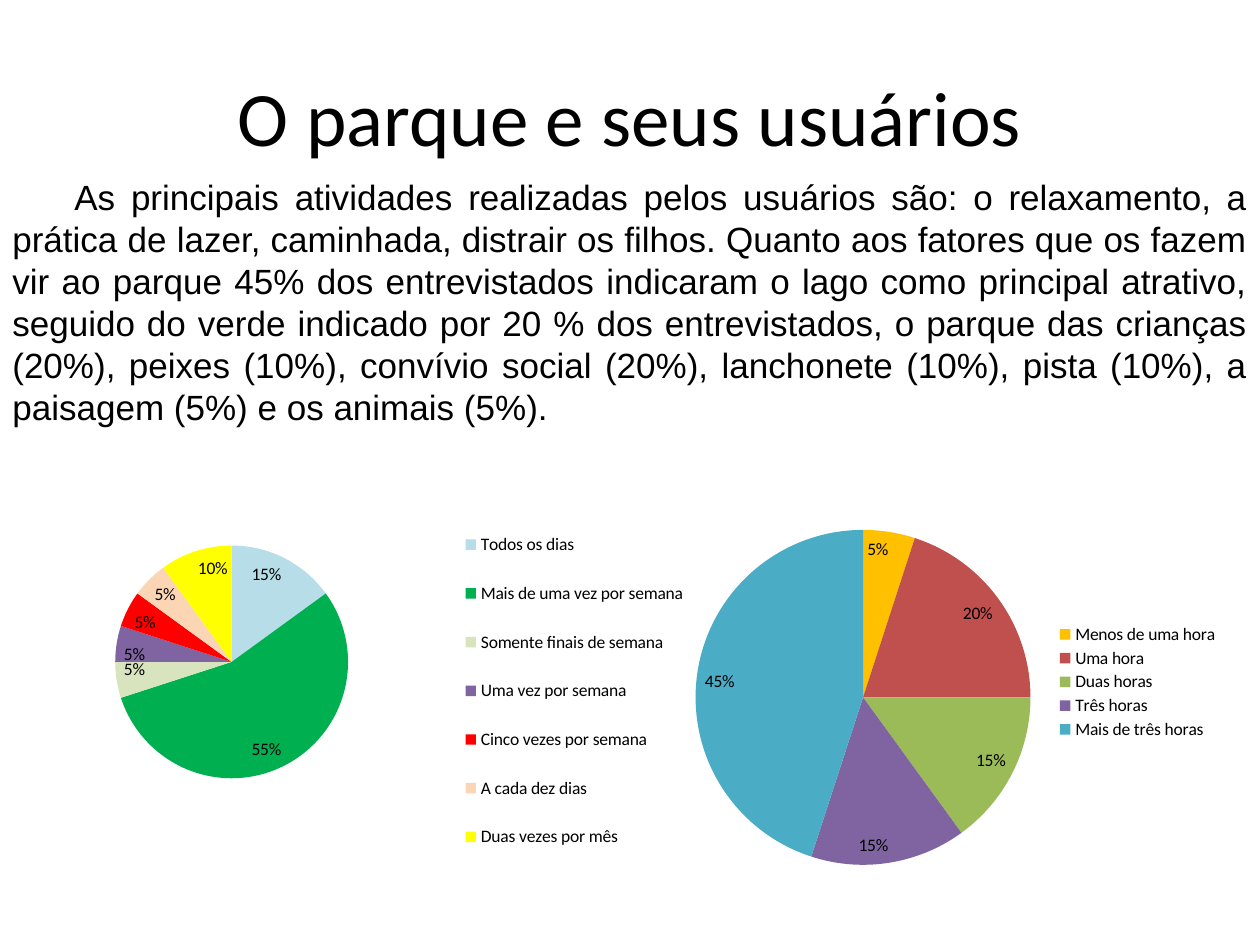
from pptx import Presentation
from pptx.chart.data import CategoryChartData
from pptx.dml.color import RGBColor
from pptx.enum.chart import XL_CHART_TYPE as ChartType, XL_LABEL_POSITION as LabelPos
from pptx.enum.chart import XL_LEGEND_POSITION as LegendPos
from pptx.enum.text import MSO_ANCHOR as Anchor, MSO_AUTO_SIZE as AutoSize, PP_ALIGN as Align
from pptx.oxml import parse_xml
from pptx.oxml.ns import nsdecls, qn
from pptx.util import Cm, Pt

TITLE = "O parque e seus usuários"
BODY = (
    "As principais atividades realizadas pelos usuários são: o relaxamento, a prática de "
    "lazer, caminhada, distrair os filhos. Quanto aos fatores que os fazem vir ao parque 45% "
    "dos entrevistados indicaram o lago como principal atrativo, seguido do verde indicado "
    "por 20 % dos entrevistados, o parque das crianças (20%), peixes (10%), convívio social "
    "(20%), lanchonete (10%), pista (10%), a paisagem (5%) e os animais (5%)."
)
# Category, percentage, slice colour
FREQUENCY = [
    ("Todos os dias", 15, "B7DEE8"),
    ("Mais de uma vez por semana", 55, "00B050"),
    ("Somente finais de semana", 5, "D7E4BD"),
    ("Uma vez por semana", 5, "8064A2"),
    ("Cinco vezes por semana", 5, "FF0000"),
    ("A cada dez dias", 5, "FCD5B5"),
    ("Duas vezes por mês", 10, "FFFF00"),
]
DURATION = [
    ("Menos de uma hora", 5, "FFC000"),
    ("Uma hora", 20, "C0504D"),
    ("Duas horas", 15, "9BBB59"),
    ("Três horas", 15, "8064A2"),
    ("Mais de três horas", 45, "4BACC6"),
]


def rgb(value):
    return RGBColor.from_string(value)


def set_font(font, name, size):
    font.name, font.size = name, Pt(size)
    font.color.rgb = rgb("000000")


def add_text(slide, box, text, name, size, align):
    """One paragraph, vertically centred in its box."""
    sp = slide.shapes.add_textbox(*map(Cm, box))
    tf = sp.text_frame
    tf.word_wrap = True
    tf.vertical_anchor = Anchor.MIDDLE
    p = tf.paragraphs[0]
    p.text = text
    p.alignment = align
    set_font(p.font, name, size)
    return sp


def add_body(slide, box):
    """Justified text with an indented first line."""
    sp = add_text(slide, box, BODY, "Arial", 20, Align.JUSTIFY)
    sp.text_frame.auto_size = AutoSize.SHAPE_TO_FIT_TEXT
    pPr = sp.text_frame.paragraphs[0]._p.get_or_add_pPr()
    pPr.set("marL", "0")
    pPr.set("indent", str(Cm(1.25)))


def set_layout(element, index, fractions, target=""):
    """Fix a chart part at x, y, w, h given as fractions of the chart."""
    for old in element.findall(qn("c:layout")):
        element.remove(old)
    modes = "".join(f'<c:{m}Mode val="edge"/>' for m in "xy")
    sizes = "".join(f'<c:{k} val="{v}"/>' for k, v in zip("xywh", fractions))
    element.insert(index, parse_xml(
        f'<c:layout {nsdecls("c")}><c:manualLayout>{target}{modes}{sizes}'
        "</c:manualLayout></c:layout>"))


def add_pie(slide, box, slices, plot_area, legend_area):
    """Pie with percentages inside and a legend on the right."""
    names, values, colours = zip(*slices)
    data = CategoryChartData()
    data.categories = names
    data.add_series("Series 1", values)
    chart = slide.shapes.add_chart(ChartType.PIE, *map(Cm, box), data).chart
    chart.has_title = False
    set_font(chart.font, "Calibri", 10)

    # Slices
    plot = chart.plots[0]
    plot.vary_by_categories = True
    for i, colour in enumerate(colours):
        fmt = plot.series[0].points[i].format
        fmt.fill.solid()
        fmt.fill.fore_color.rgb = rgb(colour)
        fmt.line.fill.background()

    # Percentage labels
    plot.has_data_labels = True
    labels = plot.data_labels
    labels.show_percentage, labels.show_value = True, False
    labels.number_format, labels.number_format_is_linked = "0%", False
    labels.position = LabelPos.INSIDE_END
    set_font(labels.font, "Calibri", 10)

    # Legend and plot placement
    chart.has_legend = True
    legend = chart.legend
    legend.position = LegendPos.RIGHT
    legend.include_in_layout = False
    set_font(legend.font, "Calibri", 10)
    set_layout(legend._element, 1, legend_area)
    set_layout(chart._chartSpace.chart.plotArea, 0, plot_area,
               '<c:layoutTarget val="inner"/>')


def main():
    prs = Presentation()
    prs.slide_width, prs.slide_height = Cm(25.4), Cm(19.05)
    slide = prs.slides.add_slide(prs.slide_layouts[6])

    add_text(slide, (1.27, 0.86, 22.86, 2.95), TITLE, "Calibri", 44, Align.CENTER)
    add_pie(slide, (0.58, 9.12, 13.41, 8.99), FREQUENCY,
            (0.13, 0.08, 0.35, 0.78), (0.64, 0.12, 0.36, 0.83))
    add_body(slide, (0, 3.38, 25.4, 5.38))
    add_pie(slide, (13.69, 9.32, 11.07, 8.86), DURATION,
            (0.03, 0.15, 0.61, 0.77), (0.68, 0.36, 0.31, 0.28))

    prs.save("out.pptx")


if __name__ == "__main__":
    main()
